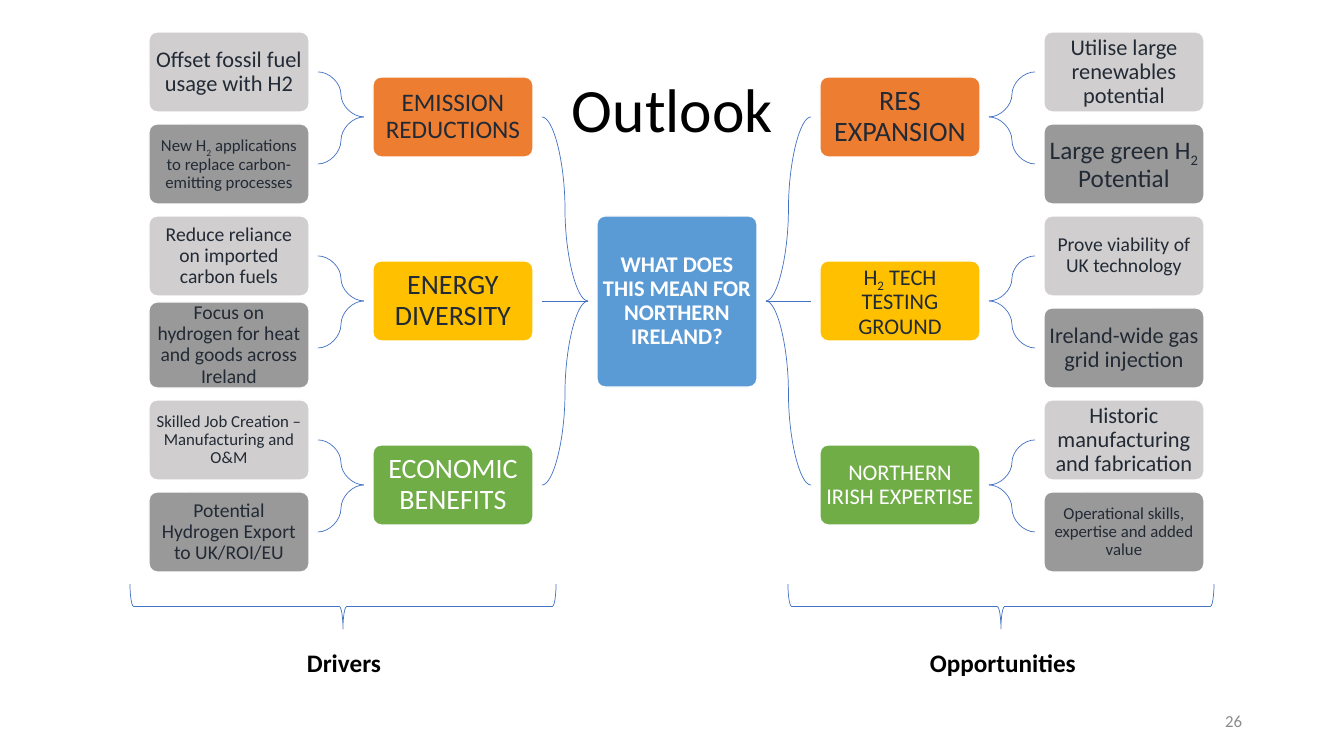
import collections

import pptx
import pptx.dml.color
import pptx.enum.shapes
import pptx.enum.text
import pptx.oxml.ns
import pptx.util

RGBColor = pptx.dml.color.RGBColor
ALIGN = pptx.enum.text.PP_ALIGN
ANCHOR = pptx.enum.text.MSO_ANCHOR
SHAPE = pptx.enum.shapes.MSO_SHAPE
CONNECTOR = pptx.enum.shapes.MSO_CONNECTOR

WHITE = RGBColor(0xFF, 0xFF, 0xFF)
BLACK = RGBColor(0x00, 0x00, 0x00)
INK = RGBColor(0x22, 0x2A, 0x35)
MUTED = RGBColor(0x8C, 0x8C, 0x8C)
ORANGE = RGBColor(0xED, 0x7D, 0x31)
AMBER = RGBColor(0xFF, 0xC0, 0x00)
GREEN = RGBColor(0x70, 0xAD, 0x47)
BLUE = RGBColor(0x5B, 0x9B, 0xD5)
LINK_BLUE = RGBColor(0x44, 0x72, 0xC4)
LIGHT_GREY = RGBColor(0xD0, 0xCE, 0xCE)
DARK_GREY = RGBColor(0x99, 0x99, 0x99)

EMU_PER_PX = 914400 / 100.8
CARD_W, CARD_H = 160, 80
COLUMN_STEP, THEME_STEP, LEAF_STEP = 224, 184, 92
BRANCH_DROP = 45
LINK_GAP = 9
RADIUS, CARD_INSET = 8, 3

Box = collections.namedtuple("Box", "x y w h")
Theme = collections.namedtuple("Theme", "label size fill ink leaves")
THEME_COLOURS = [(ORANGE, INK), (AMBER, INK), (GREEN, WHITE)]

DRIVERS = [
    ("EMISSION REDUCTIONS", 18, [
        ("Offset fossil fuel usage with H2", 16),
        ("New H₂ applications to replace carbon-emitting processes", 12)]),
    ("ENERGY DIVERSITY", 20, [
        ("Reduce reliance on imported carbon fuels", 14),
        ("Focus on hydrogen for heat and goods across Ireland", 14)]),
    ("ECONOMIC BENEFITS", 20, [
        ("Skilled Job Creation – Manufacturing and O&M", 12),
        ("Potential Hydrogen Export to UK/ROI/EU", 14)]),
]
OPPORTUNITIES = [
    ("RES EXPANSION", 20, [
        ("Utilise large renewables potential", 16),
        ("Large green H₂ Potential", 18)]),
    ("H₂ TECH TESTING GROUND", 16, [
        ("Prove viability of UK technology", 14),
        ("Ireland-wide gas grid injection", 16)]),
    ("NORTHERN IRISH EXPERTISE", 16, [
        ("Historic manufacturing and fabrication", 16),
        ("Operational skills, expertise and added value", 12)]),
]
# The longest leaf needs a taller card: label -> (rise, height)
TALL_LEAVES = {"Focus on hydrogen for heat and goods across Ireland": (6, 86)}


def px(length):
    return pptx.util.Emu(round(length * EMU_PER_PX))


def apply(target, **values):
    for name, value in values.items():
        setattr(target, name, value)


def place(part, box):
    apply(part, left=px(box.x), top=px(box.y), width=px(box.w), height=px(box.h))


def write(frame, text, size, colour, align, bold=False, spacing=None):
    """Write one paragraph, setting the character ₂ as a real subscript."""
    paragraph = frame.paragraphs[0]
    apply(paragraph, alignment=align, line_spacing=spacing)
    before, mark, after = text.partition("₂")
    for words, lowered in ((before, False), ("2" if mark else "", True), (after, False)):
        if not words:
            continue
        run = paragraph.add_run()
        run.text = words
        apply(run.font, size=pptx.util.Pt(size), name="Calibri", bold=bold)
        run.font.color.rgb = colour
        if lowered:
            run.font._element.set("baseline", "-25000")


def add_label(slide, box, text, size, colour, align, bold=False):
    frame = slide.shapes.add_textbox(*map(px, box)).text_frame
    apply(frame, word_wrap=True, vertical_anchor=ANCHOR.MIDDLE)
    write(frame, text, size, colour, align, bold)


def add_card(slide, box, text, size, fill, ink, bold=False):
    card = slide.shapes.add_shape(SHAPE.ROUNDED_RECTANGLE, *map(px, box))
    card.adjustments[0] = RADIUS / min(box.w, box.h)
    card.shadow.inherit = False
    card.fill.solid()
    card.fill.fore_color.rgb = fill
    card.line.color.rgb = WHITE
    card.line.width = pptx.util.Pt(1)
    inset = px(CARD_INSET)
    apply(card.text_frame, word_wrap=True, vertical_anchor=ANCHOR.MIDDLE,
          margin_left=inset, margin_right=inset, margin_top=inset, margin_bottom=inset)
    write(card.text_frame, text, size, ink, ALIGN.CENTER, bold, spacing=0.9)


def add_link(slide, start, end):
    kind = CONNECTOR.STRAIGHT if start[1] == end[1] else CONNECTOR.CURVE
    link = slide.shapes.add_connector(kind, *map(px, start + end))
    link.line.color.rgb = LINK_BLUE
    link.line.width = pptx.util.Pt(0.5)
    properties = link._element.spPr
    properties.append(properties.makeelement(pptx.oxml.ns.qn("a:effectLst"), {}))


def outer_edge(box, direction):
    """Return the x just outside the box, on its left (-1) or right (1)."""
    return box.x + box.w + LINK_GAP if direction > 0 else box.x - LINK_GAP


def add_theme(slide, box, theme, hub, direction):
    """Add a branch and its leaves, growing away from the hub in the direction."""
    near, far = box.x, box.x + COLUMN_STEP
    if direction < 0:
        near, far = far, near
    branch = Box(near, box.y + BRANCH_DROP, CARD_W, CARD_H)
    middle = branch.y + branch.h // 2
    add_link(slide, (outer_edge(hub, direction), hub.y + hub.h // 2),
             (outer_edge(branch, -direction), middle))
    add_card(slide, branch, theme.label, theme.size, theme.fill, theme.ink)
    for row, (text, size) in enumerate(theme.leaves):
        top = box.y + row * LEAF_STEP
        rise, height = TALL_LEAVES.get(text, (0, CARD_H))
        leaf = Box(far, top - rise, CARD_W, height)
        add_link(slide, (outer_edge(branch, direction), middle),
                 (outer_edge(leaf, -direction), top + CARD_H // 2))
        add_card(slide, leaf, text, size, (LIGHT_GREY, DARK_GREY)[row], INK)


def add_side(slide, box, themes, hub, direction):
    for row, ((label, size, leaves), colours) in enumerate(zip(themes, THEME_COLOURS)):
        theme_box = box._replace(y=box.y + row * THEME_STEP, h=THEME_STEP)
        add_theme(slide, theme_box, Theme(label, size, *colours, leaves), hub, direction)


def add_summary(slide, box, text, text_x, text_w):
    """Add a brace opening upwards across the box, with its caption below."""
    brace = slide.shapes.add_shape(
        SHAPE.LEFT_BRACE, px(box.x + (box.w - box.h) / 2), px(box.y - (box.w - box.h) / 2),
        px(box.h), px(box.w))
    brace.rotation = 270
    brace.shadow.inherit = False
    brace.fill.background()
    brace.line.color.rgb = LINK_BLUE
    brace.line.width = pptx.util.Pt(0.5)
    caption = Box(box.x + text_x, box.y + 58, text_w, 40)
    add_label(slide, caption, text, 18, BLACK, ALIGN.LEFT, bold=True)


def add_heading(slide, box, text):
    title = slide.shapes.title
    place(title, box)
    apply(title.text_frame, word_wrap=True, vertical_anchor=ANCHOR.MIDDLE)
    write(title.text_frame, text, 44, BLACK, ALIGN.CENTER, spacing=0.9)


def main():
    deck = pptx.Presentation()
    apply(deck, slide_width=px(1344), slide_height=px(756))
    slide = deck.slides.add_slide(deck.slide_layouts[5])
    add_heading(slide, Box(93, 40, 1159, 146), "Outlook")

    hub = Box(597, 216, CARD_W, 171)
    add_card(slide, hub, "WHAT DOES THIS MEAN FOR NORTHERN IRELAND?", 16, BLUE, WHITE, bold=True)
    side_w = COLUMN_STEP + CARD_W
    add_side(slide, Box(149, 32, side_w, 540), DRIVERS, hub, -1)
    add_side(slide, Box(820, 32, side_w, 540), OPPORTUNITIES, hub, 1)

    add_summary(slide, Box(130, 584, 426, 45), "Drivers", 167, 104)
    add_summary(slide, Box(788, 584, 426, 45), "Opportunities", 132, 177)
    add_label(slide, Box(950, 701, 302, 40), "26", 12, MUTED, ALIGN.RIGHT)
    deck.save("out.pptx")


if __name__ == "__main__":
    main()
